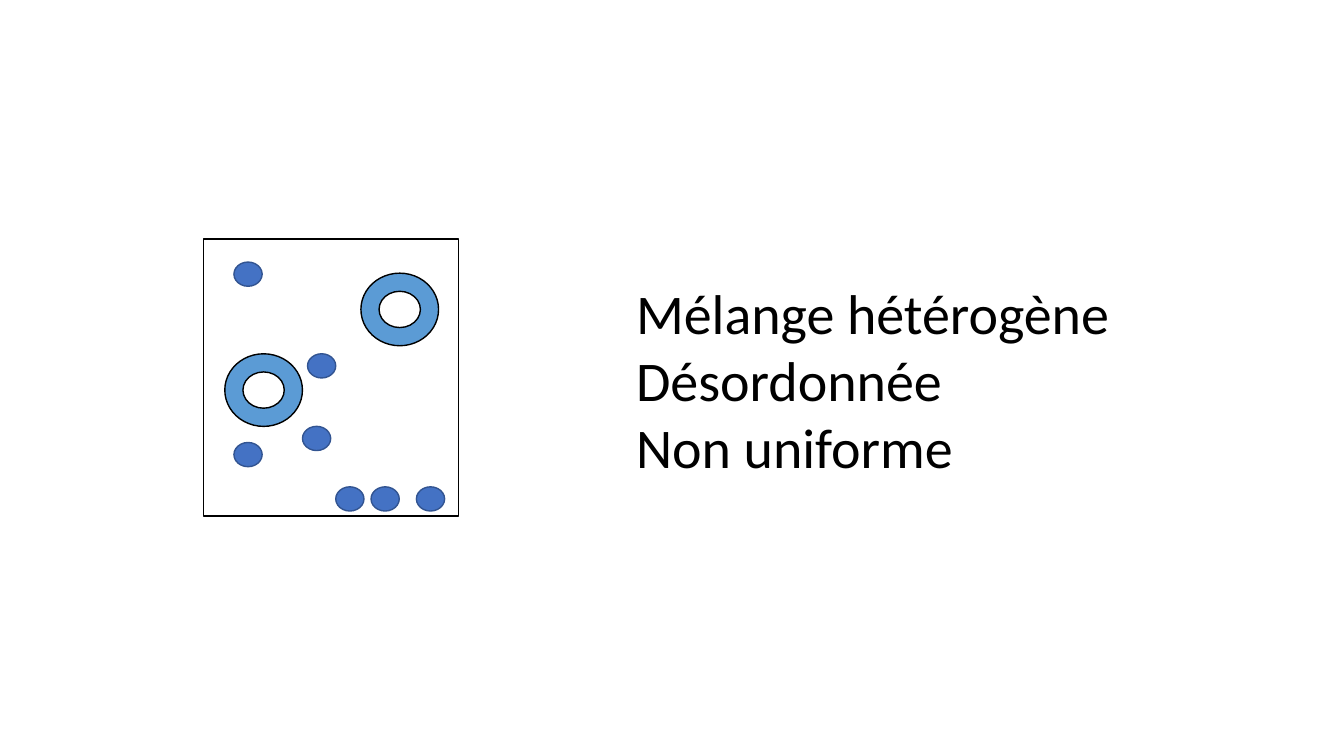
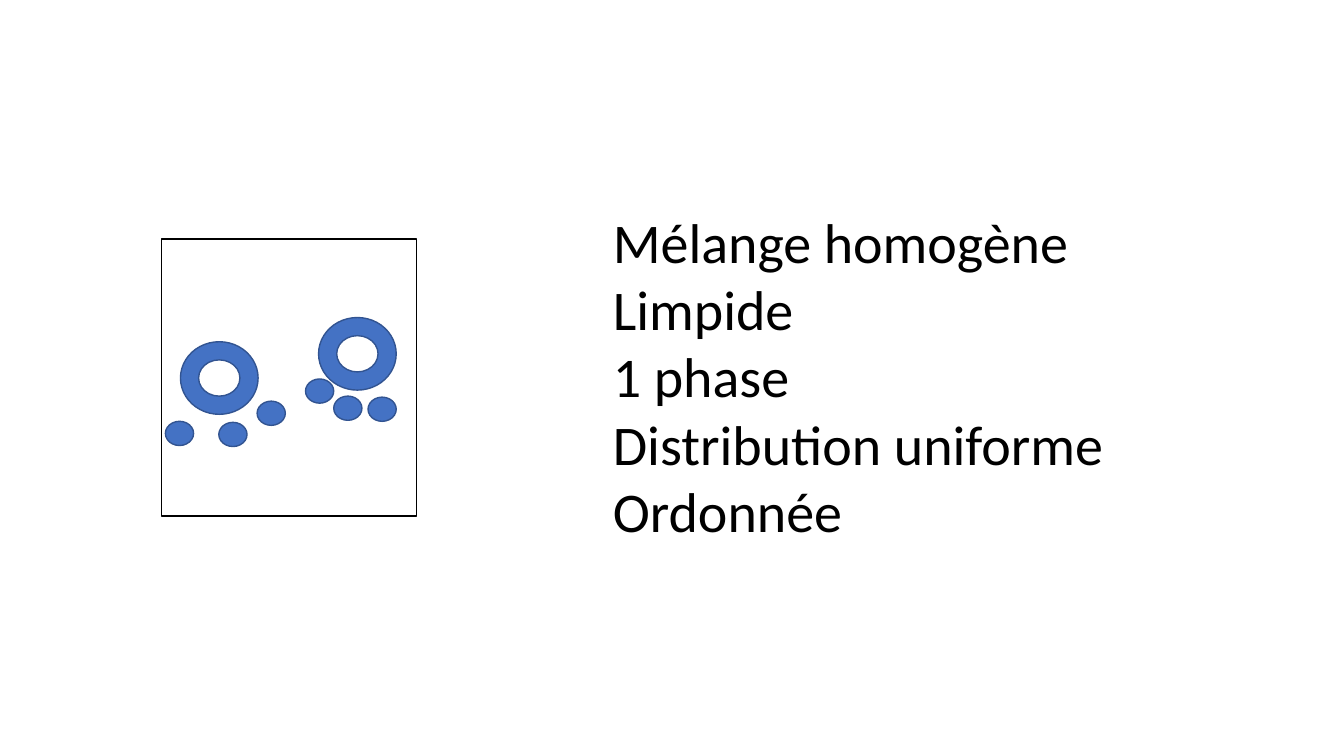
from pptx import Presentation
from pptx.dml.color import RGBColor
from pptx.enum.shapes import MSO_SHAPE
from pptx.enum.text import MSO_AUTO_SIZE
from pptx.util import Pt

RECTANGLE = MSO_SHAPE.RECTANGLE
DONUT = MSO_SHAPE.DONUT
OVAL = MSO_SHAPE.OVAL
FIT_SHAPE = MSO_AUTO_SIZE.SHAPE_TO_FIT_TEXT

EMU_PER_PX = 9144
SLIDE_SIZE = (1333, 750)
CONTAINER_SIZE = (253, 275)
RING_SIZE = (77, 72)
DOT_SIZE = (28, 24)
FONT = "Calibri"
FONT_SIZE = 40

COLORS = {
    "white": "FFFFFF",
    "black": "000000",
    "light_blue": "5B9BD5",
    "blue": "4472C4",
    "dark_blue": "325491",
}

MIXTURES = [
    {
        "container": (202, 237),
        "ring_colors": ("light_blue", "black"),
        "rings": [(358, 271), (223, 351)],
        "dots": [(232, 260), (368, 483), (413, 483), (305, 351),
                 (300, 423), (232, 439), (333, 483)],
        "text_area": (621, 271, 512, 212),
        "lines": ["Mélange hétérogène", "Désordonnée", "Non uniforme"],
    },
    {
        "container": (160, 237),
        "ring_colors": ("blue", "dark_blue"),
        "rings": [(179, 339), (316, 315)],
        "dots": [(217, 419), (164, 418), (255, 398), (303, 376),
                 (365, 394), (331, 393)],
        "text_area": (598, 201, 585, 347),
        "lines": ["Mélange homogène", "Limpide", "1 phase",
                  "Distribution uniforme", "Ordonnée"],
    },
]


def px(*lengths):
    return [length * EMU_PER_PX for length in lengths]


def color(name):
    return RGBColor.from_string(COLORS[name])


def add_figure(page, kind, position, size, fill, line):
    shape = page.shapes.add_shape(kind, *px(*position, *size))
    shape.shadow.inherit = False
    shape.fill.solid()
    shape.fill.fore_color.rgb = color(fill)
    shape.line.color.rgb = color(line)
    shape.line.width = Pt(1)


def add_description(page, area, lines):
    box = page.shapes.add_textbox(*px(*area))
    frame = box.text_frame
    frame.word_wrap = True
    frame.auto_size = FIT_SHAPE
    for index, line in enumerate(lines):
        para = frame.add_paragraph() if index else frame.paragraphs[0]
        span = para.add_run()
        span.text = line
        span.font.name = FONT
        span.font.size = Pt(FONT_SIZE)
        span.font.color.rgb = color("black")


def add_mixture(deck, mixture):
    page = deck.slides.add_slide(deck.slide_layouts[6])
    add_figure(page, RECTANGLE, mixture["container"], CONTAINER_SIZE, "white", "black")
    for position in mixture["rings"]:
        add_figure(page, DONUT, position, RING_SIZE, *mixture["ring_colors"])
    for position in mixture["dots"]:
        add_figure(page, OVAL, position, DOT_SIZE, "blue", "dark_blue")
    add_description(page, mixture["text_area"], mixture["lines"])


def main():
    deck = Presentation()
    deck.slide_width, deck.slide_height = px(*SLIDE_SIZE)
    for mixture in MIXTURES:
        add_mixture(deck, mixture)
    deck.save("out.pptx")


if __name__ == "__main__":
    main()
